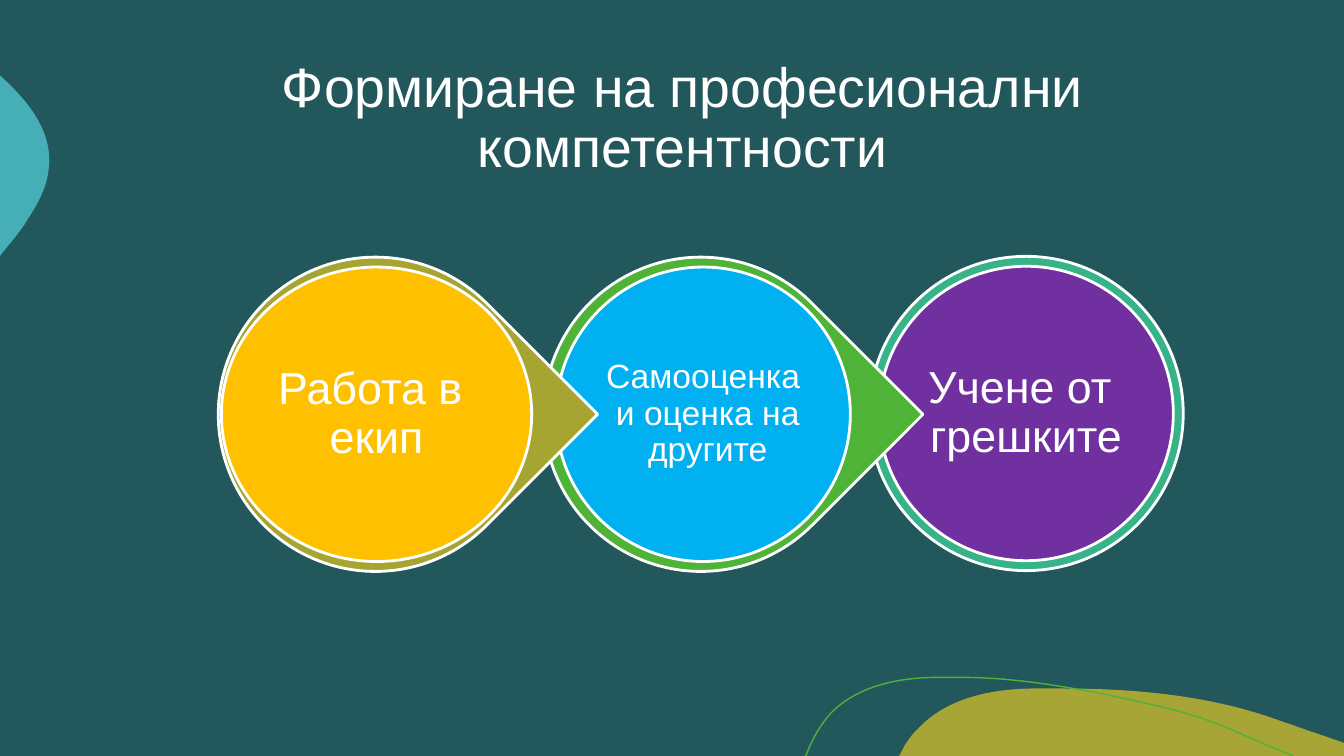
from dataclasses import dataclass

from lxml.etree import Element
from pptx import Presentation
from pptx.dml.color import RGBColor
from pptx.enum.shapes import MSO_SHAPE as Kind
from pptx.enum.text import MSO_ANCHOR as Anchor, MSO_AUTO_SIZE as Fit, PP_ALIGN as Align
from pptx.oxml.ns import qn
from pptx.util import Cm, Pt


@dataclass(frozen=True)
class Theme:
    font: str = "Arial"
    back: str = "22575B"
    white: str = "FFFFFF"
    hill: str = "A7A535"
    drop: str = "45AEB6"
    wave: str = "50B339"
    title: float = 39.6
    large: float = 32
    small: float = 24
    edge: float = 2
    thin: float = 1


@dataclass(frozen=True)
class Step:
    text: str
    size: float
    ring: str
    disc: str
    kind: Kind
    width: float = 7.42
    inner: float = 5.28
    shift: float = 0
    mid: float = 10.44


THEME = Theme()
STEPS = [
    Step("Работа в екип", THEME.large, "A7A532", "FFC000", Kind.TEAR,
         width=7.82, inner=5.59, shift=0.03),
    Step("Самооценка и оценка на другите", THEME.small, "4EB336", "00B0F0",
         Kind.TEAR, shift=0.06),
    Step("Учене от грешките", THEME.large, "36B388", "7030A0", Kind.OVAL,
         mid=10.42),
]
RING, DISC, TEXT = 7.92, 7.42, 5.28
FIRST, GAP = 9.46, 8.2
HARD = chr(160)  # no-break space between the words of a label

# Outlines in cm: a pair is a straight step, six numbers are a Bezier step.
HILL = [
    (26.77, 17.35), (28.65, 17.35, 30.58, 17.53, 32.33, 18.19),
    (32.66, 18.29, 32.97, 18.42, 33.3, 18.52), (33.87, 18.72),
    (33.87, 19.05), (22.66, 19.05), (22.81, 18.77),
    (22.91, 18.62, 23.01, 18.47, 23.14, 18.36),
    (23.85, 17.6, 24.94, 17.37, 25.98, 17.35),
    (26.23, 17.35, 26.52, 17.35, 26.77, 17.35),
]
DROP = [
    (0, 1.9), (0.03, 1.93), (0.76, 2.59, 1.37, 3.38, 1.22, 4.32),
    (1.17, 4.75, 0.94, 5.16, 0.69, 5.54),
    (0.61, 5.69, 0.43, 5.92, 0.2, 6.2), (0, 6.45),
]
WAVE = [
    (20.29, 19.05), (20.32, 19.02),
    (20.47, 18.62, 20.68, 18.26, 20.93, 17.98),
    (21.59, 17.3, 22.58, 17.09, 23.52, 17.07), (24.26, 17.07),
    (25.96, 17.07, 27.94, 17.5, 29.34, 17.83),
    (30.71, 18.16, 31.14, 18.47, 32.59, 19.05),
]


def color(code):
    return RGBColor.from_string(code)


def paint(shape, fill=None, line=None, width=0):
    shape.shadow.inherit = False
    if fill:
        shape.fill.solid()
        shape.fill.fore_color.rgb = color(fill)
    else:
        shape.fill.background()
    if line:
        shape.line.color.rgb = color(line)
        shape.line.width = Pt(width)
    else:
        shape.line.fill.background()


def bend(shape, steps):
    """Make each straight edge that has control points a Bezier edge."""
    edges = list(shape.element.iter(qn("a:lnTo")))
    for edge, step in zip(edges, steps[1:]):
        if len(step) == 2:
            continue
        edge.tag = qn("a:cubicBezTo")
        for i in (0, 1):
            x, y = step[2 * i:2 * i + 2]
            edge.insert(i, Element(qn("a:pt"), x=str(Cm(x) - shape.left),
                                   y=str(Cm(y) - shape.top)))


def add_curve(slide, steps, close=True, **look):
    ends = [(Cm(step[-2]), Cm(step[-1])) for step in steps]
    pen = slide.shapes.build_freeform(*ends[0])
    pen.add_line_segments(ends[1:], close=close)
    shape = pen.convert_to_shape()
    bend(shape, steps)
    paint(shape, **look)


def frame(x, y, width, height):
    """Give the box of a shape from its centre."""
    return Cm(x - width / 2), Cm(y - height / 2), Cm(width), Cm(height)


def write(shape, text, size, side, top):
    box = shape.text_frame
    box.word_wrap = True
    box.auto_size = Fit.NONE
    box.vertical_anchor = Anchor.MIDDLE
    box.margin_left = box.margin_right = Cm(side)
    box.margin_top = box.margin_bottom = Cm(top)
    para = box.paragraphs[0]
    para.alignment = Align.CENTER
    para.line_spacing = 0.9
    para.space_before = Pt(0)
    run = para.add_run()
    run.text = text
    run.font.name = THEME.font
    run.font.size = Pt(size)
    run.font.color.rgb = color(THEME.white)


def add_title(slide, text):
    title = slide.shapes.title
    title.left, title.top = Cm(4.22), Cm(1.63)
    title.width, title.height = Cm(25.96), Cm(2.77)
    write(title, text, THEME.title, 0.25, 0.13)


def add_step(slide, step, x):
    shapes = slide.shapes
    ring = shapes.add_shape(step.kind, *frame(x, step.mid, RING, RING))
    if step.kind == Kind.TEAR:
        ring.rotation = 45
    paint(ring, step.ring, THEME.white, THEME.edge)
    x += step.shift
    disc = shapes.add_shape(Kind.OVAL, *frame(x, step.mid, step.width, DISC))
    paint(disc, step.disc, THEME.white, THEME.edge)
    label = shapes.add_textbox(*frame(x, step.mid, step.inner, TEXT))
    write(label, step.text.replace(" ", HARD), step.size, 0.1, 0.1)


def main():
    deck = Presentation()
    deck.slide_width, deck.slide_height = Cm(33.87), Cm(19.05)
    slide = deck.slides.add_slide(deck.slide_layouts[5])
    slide.background.fill.solid()
    slide.background.fill.fore_color.rgb = color(THEME.back)

    add_curve(slide, HILL, fill=THEME.hill)
    add_curve(slide, DROP, fill=THEME.drop)
    add_curve(slide, WAVE, close=False, line=THEME.wave, width=THEME.thin)
    add_title(slide, "Формиране на професионални компетентности")
    # Right to left, so that each tip lies over the next ring.
    for i, step in reversed(list(enumerate(STEPS))):
        add_step(slide, step, FIRST + i * GAP)
    deck.save("out.pptx")


if __name__ == "__main__":
    main()
